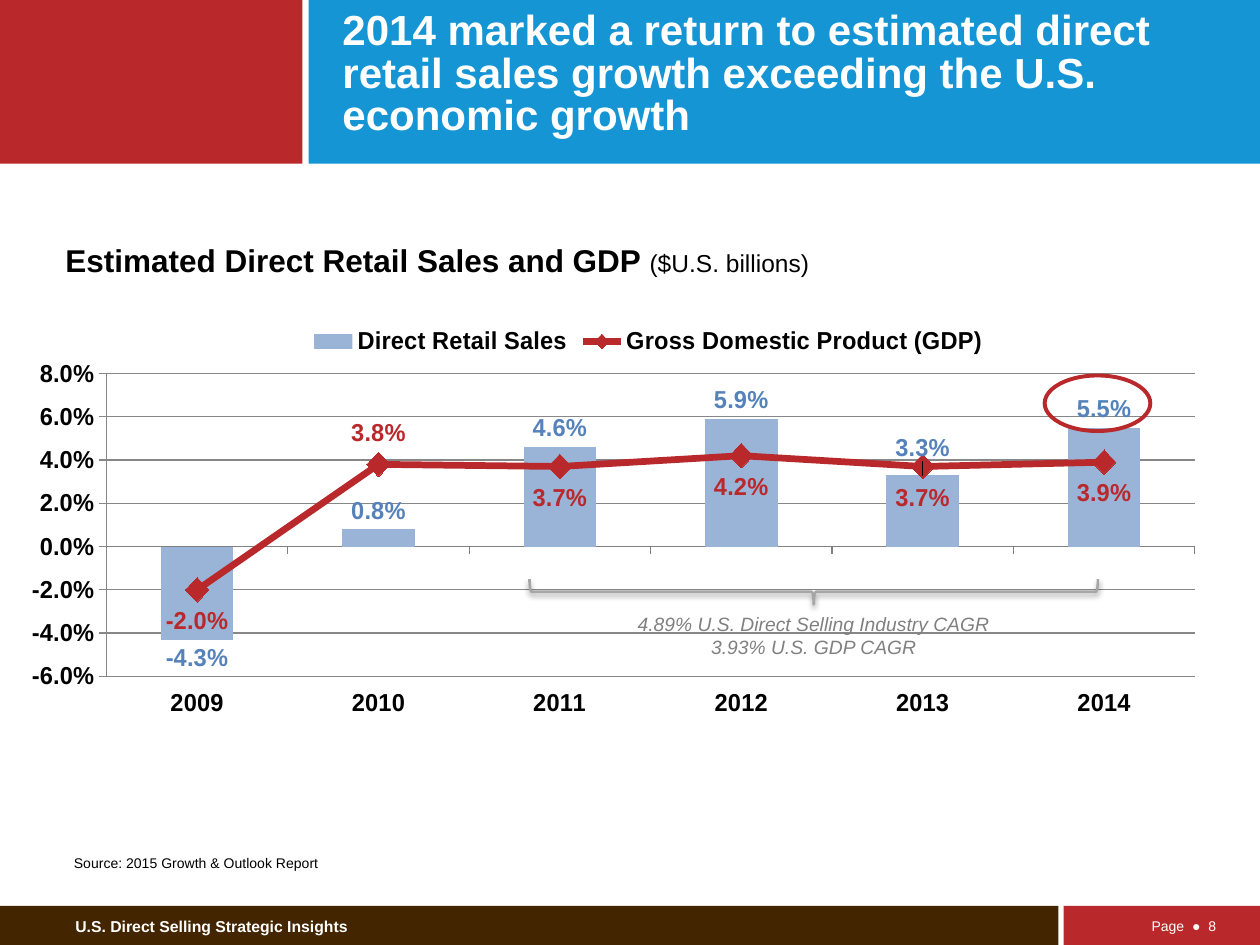
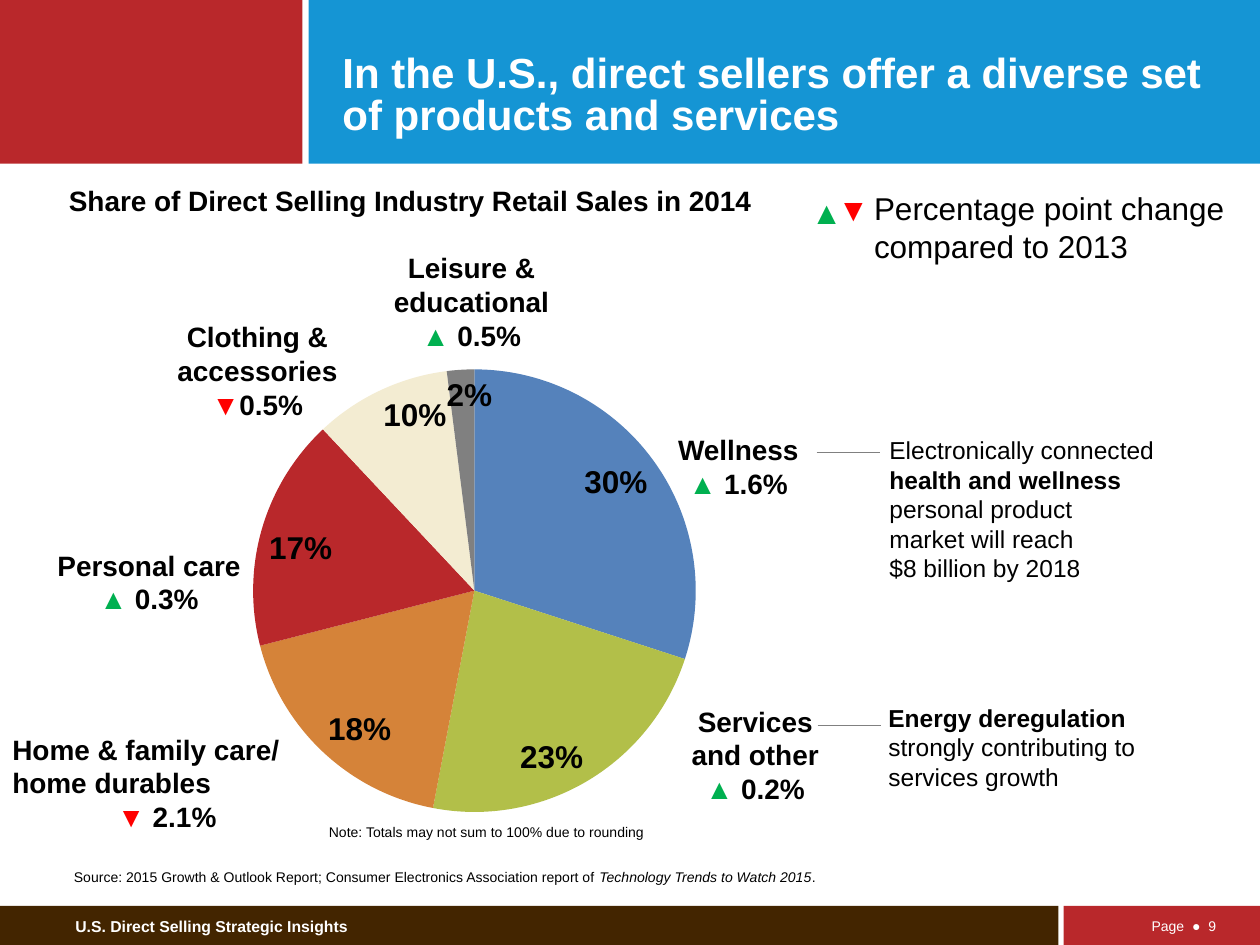
from lxml.etree import SubElement
from pptx import Presentation
from pptx.chart.data import CategoryChartData
from pptx.dml.color import RGBColor
from pptx.enum.chart import (XL_CHART_TYPE, XL_LABEL_POSITION, XL_LEGEND_POSITION,
                             XL_MARKER_STYLE, XL_TICK_LABEL_POSITION, XL_TICK_MARK)
from pptx.enum.shapes import MSO_CONNECTOR, MSO_SHAPE
from pptx.enum.text import MSO_ANCHOR, MSO_AUTO_SIZE, PP_ALIGN
from pptx.oxml import parse_xml
from pptx.oxml.ns import nsdecls, qn
from pptx.util import Cm, Pt

HUES = {"white": "FFFFFF", "black": "000000", "brown": "432500", "blue": "1595D4",
        "red": "B9282B", "steel": "5582BB", "sky": "99B4D6", "olive": "B2BF49",
        "orange": "D58339", "cream": "F3ECD2", "gray": "808080", "silver": "A6A6A6",
        "up": "00B050", "down": "FF0000", "mark": "C00000"}
BASE = {"name": "Arial", "size": Pt(16), "bold": False, "italic": False, "color": "black"}
NOTE = {"size": Pt(8)}
BOLD = {"bold": True}
BODY = {"size": Pt(14)}
LABEL = {"size": Pt(14), "bold": True}
LEFT, MID, RIGHT = PP_ALIGN.LEFT, PP_ALIGN.CENTER, PP_ALIGN.RIGHT
ARROWS = {"up": "▲", "down": "▼"}


class Deck:
    """Holds the house style and the current slide."""

    def __init__(self):
        self.pres = Presentation()
        self.pres.slide_width, self.pres.slide_height = Cm(25.4), Cm(19.05)
        self.layout = self.pres.slide_layouts[5]

    def hue(self, name):
        return RGBColor.from_string(HUES[name])

    def place(self, box):
        return [Cm(size) for size in box]

    def style(self, font, look):
        for key, value in {**BASE, **look}.items():
            if key == "color":
                font.color.rgb = self.hue(value)
            else:
                setattr(font, key, value)

    def paint(self, form, fill=None, line=None, width=0):
        if fill:
            form.fill.solid()
            form.fill.fore_color.rgb = self.hue(fill)
        else:
            form.fill.background()
        if line:
            form.line.color.rgb = self.hue(line)
            form.line.width = Pt(width)
        else:
            form.line.fill.background()

    def open(self, title, page):
        self.slide = self.pres.slides.add_slide(self.layout)
        if len(self.pres.slides) == 1:
            self.brand()
        head = self.slide.shapes.title
        for key, size in zip(("left", "top", "width", "height"),
                             self.place((6.65, 0.48, 18.11, 2.46))):
            setattr(head, key, size)
        frame = head.text_frame
        frame.auto_size, frame.vertical_anchor = MSO_AUTO_SIZE.NONE, MSO_ANCHOR.BOTTOM
        look = {"size": Pt(24), "bold": True, "color": "white"}
        self.fill(frame.paragraphs[0], LEFT, [(title, look)])
        frame.paragraphs[0].line_spacing = 0.85
        self.text((21.34, 18.36, 3.43, 0.61),
                  (RIGHT, [(f"Page  ●  {page}", {**NOTE, "color": "white"})]),
                  anchor=MSO_ANCHOR.MIDDLE)

    def brand(self):
        bands = [("brown", (0, 18.26, 21.34, 0.79)), ("blue", (6.22, 0, 19.18, 3.3)),
                 ("red", (0, 0, 6.1, 3.3)), ("red", (21.44, 18.26, 3.96, 0.79))]
        parts = [self.shape(MSO_SHAPE.RECTANGLE, box, fill=hue) for hue, box in bands]
        look = {"size": Pt(9), "bold": True, "color": "white"}
        parts.append(self.text((1.27, 18.36, 8.38, 0.64),
                               (LEFT, [("U.S. Direct Selling Strategic Insights", look)]),
                               anchor=MSO_ANCHOR.MIDDLE))
        for spot, part in enumerate(parts):
            part.element.nvSpPr.cNvPr.set("id", str(20 + spot))
            self.layout.shapes.element.insert(2 + spot, part.element)

    def fill(self, para, align, runs):
        para.alignment = align
        for words, look in runs:
            for row, piece in enumerate(words.split("\n")):
                if row:
                    para.add_line_break()
                run = para.add_run()
                run.text = piece
                self.style(run.font, look)

    def text(self, box, *paras, anchor=MSO_ANCHOR.TOP, inset=(0.25, 0.13)):
        item = self.slide.shapes.add_textbox(*self.place(box))
        frame = item.text_frame
        frame.word_wrap, frame.vertical_anchor = True, anchor
        frame.margin_left = frame.margin_right = Cm(inset[0])
        frame.margin_top = frame.margin_bottom = Cm(inset[1])
        for row, (align, runs) in enumerate(paras):
            para = frame.add_paragraph() if row else frame.paragraphs[0]
            self.fill(para, align, runs)
        return item

    def shape(self, kind, box, **look):
        item = self.slide.shapes.add_shape(kind, *self.place(box))
        item.shadow.inherit = False
        self.paint(item, **look)
        return item

    def brace(self, box):
        item = self.shape(MSO_SHAPE.RIGHT_BRACE, box, line="silver", width=1.5)
        item.rotation = 270
        item.element.spPr.find(qn("a:xfrm")).set("flipH", "1")
        item.element.spPr.find(qn("a:effectLst")).append(parse_xml(
            f'<a:outerShdw {nsdecls("a")} blurRad="{Pt(3.1)}" dist="{Pt(1.6)}" dir="5400000" '
            f'rotWithShape="0"><a:srgbClr val="{HUES["black"]}"><a:alpha val="38000"/>'
            '</a:srgbClr></a:outerShdw>'))

    def rule(self, left, top, width):
        ends = self.place((left, top, left + width, top))
        item = self.slide.shapes.add_connector(MSO_CONNECTOR.STRAIGHT, *ends)
        item.line.color.rgb, item.line.width = self.hue("gray"), Pt(0.75)
        SubElement(item.element.spPr, qn("a:effectLst"))

    def tag(self, box, name, trend, change, align=MID):
        self.text(box, (align, [(name, BOLD)]),
                  (MID, [(ARROWS[trend], {**BOLD, "color": trend}), (change, BOLD)]))

    def chart(self, kind, box, cats, series, form, look, plot):
        data = CategoryChartData(number_format=form)
        data.categories = cats
        for name, values in series.items():
            data.add_series(name, values)
        chart = self.slide.shapes.add_chart(kind, *self.place(box), data).chart
        chart.has_title = chart.has_legend = False
        self.style(chart.font, look)
        area = chart.element.chart.plotArea
        for old in area.findall(qn("c:layout")):
            area.remove(old)
        self.shift(area, 0, '<c:layoutTarget val="inner"/><c:xMode val="edge"/>'
                   '<c:yMode val="edge"/>', **dict(zip("xywh", plot)))
        return chart

    def shift(self, node, spot, lead="", **marks):
        tags = "".join(f'<c:{key} val="{value}"/>' for key, value in marks.items())
        node.insert(spot, parse_xml(f'<c:layout {nsdecls("c")}><c:manualLayout>{lead}{tags}'
                                    '</c:manualLayout></c:layout>'))

    def labels(self, series, place, form, look):
        marks = series.data_labels
        marks.show_value, marks.position = True, place
        marks.number_format, marks.number_format_is_linked = form, False
        self.style(marks.font, look)

    def single(self, series, spot, place, look):
        mark = series.points[spot].data_label
        mark.position = place
        self.style(mark.font, look)

    def nudge(self, chart, spot, **marks):
        for node in chart.element.xpath(f".//c:dLbl[c:idx/@val={spot}]"):
            self.shift(node, 1, **marks)

    def overlay(self, chart, low, high, step):
        area = chart.element.chart.plotArea
        bars = area.find(qn("c:barChart"))
        ser = bars.findall(qn("c:ser"))[-1]
        for flag in ser.findall(qn("c:invertIfNegative")):
            ser.remove(flag)
        line = parse_xml(f'<c:lineChart {nsdecls("c")}><c:grouping val="standard"/>'
                         '<c:varyColors val="0"/><c:marker val="1"/><c:axId val="501"/>'
                         '<c:axId val="502"/></c:lineChart>')
        line.insert(2, ser)
        bars.addnext(line)
        spot = area.find(qn("c:valAx"))
        axes = [("catAx", 501, 502, "", "b", "autoZero", ""),
                ("valAx", 502, 501, f'<c:max val="{high}"/><c:min val="{low}"/>', "r", "max",
                 f'<c:majorUnit val="{step}"/>')]
        for kind, own, other, scale, side, cross, unit in axes:
            axis = parse_xml(
                f'<c:{kind} {nsdecls("c")}><c:axId val="{own}"/><c:scaling>'
                f'<c:orientation val="minMax"/>{scale}</c:scaling><c:delete val="1"/>'
                f'<c:axPos val="{side}"/><c:crossAx val="{other}"/>'
                f'<c:crosses val="{cross}"/>{unit}</c:{kind}>')
            spot.addnext(axis)
            spot = axis
        return chart.plots[1].series[0]


def growth(deck):
    deck.open("2014 marked a return to estimated direct retail sales growth exceeding "
              "the U.S. economic growth", 8)
    deck.text((1.07, 4.72, 23.95, 1.02),
              (LEFT, [("Estimated Direct Retail Sales and GDP ", {"size": Pt(18), "bold": True}),
                      ("($U.S. billions)", BODY)]))
    series = {"Direct Retail Sales": (-0.043, 0.008, 0.046, 0.059, 0.033, 0.055),
              "Gross Domestic Product (GDP)": (-0.02, 0.038, 0.037, 0.042, 0.037, 0.039)}
    years = [str(year) for year in range(2009, 2015)]
    chart = deck.chart(XL_CHART_TYPE.COLUMN_CLUSTERED, (0.64, 6.32, 23.98, 8.46), years,
                       series, "0.0%", LABEL, (0.027, 0.143, 0.95, 0.722))
    gdp = deck.overlay(chart, -0.07, 0.07, 0.02)
    chart.has_legend = True
    chart.legend.position = XL_LEGEND_POSITION.TOP
    chart.legend.include_in_layout = False
    deck.style(chart.legend.font, LABEL)
    value = chart.value_axis
    for key, item in {"minimum_scale": -0.06, "maximum_scale": 0.08, "major_unit": 0.02,
                      "has_major_gridlines": False, "visible": False}.items():
        setattr(value, key, item)
    axis = chart.category_axis
    axis.tick_label_position = XL_TICK_LABEL_POSITION.LOW
    axis.major_tick_mark = XL_TICK_MARK.OUTSIDE
    axis.format.line.color.rgb = deck.hue("gray")
    bars = chart.plots[0]
    bars.gap_width, bars.vary_by_categories = 150, False
    sales = bars.series[0]
    deck.paint(sales.format, fill="sky")
    blue, red = {**LABEL, "color": "steel"}, {**LABEL, "color": "red"}
    deck.labels(sales, XL_LABEL_POSITION.OUTSIDE_END, "0.0%", blue)
    deck.single(sales, 4, XL_LABEL_POSITION.OUTSIDE_END, blue)
    deck.nudge(chart, 4, x=0, y=-0.02)
    gdp.smooth = False
    gdp.format.line.color.rgb, gdp.format.line.width = deck.hue("red"), Pt(4)
    gdp.marker.style, gdp.marker.size = XL_MARKER_STYLE.DIAMOND, 14
    deck.paint(gdp.marker.format, fill="mark")
    deck.labels(gdp, XL_LABEL_POSITION.BELOW, "0.0%", red)
    deck.single(gdp, 1, XL_LABEL_POSITION.ABOVE, red)
    deck.shape(MSO_SHAPE.OVAL, (21.06, 7.57, 2.13, 1.12), line="red", width=2.25)
    deck.text((1.24, 17.09, 15.09, 0.61),
              (LEFT, [("Source: 2015 Growth & Outlook Report", NOTE)]))
    deck.brace((16.15, 6.2, 0.51, 11.46))
    look = {"size": Pt(11), "italic": True, "color": "gray"}
    deck.text((12.34, 12.22, 8.13, 1.68),
              (MID, [("4.89% U.S. Direct Selling Industry CAGR\n3.93% U.S. GDP CAGR", look)]))


def share(deck):
    deck.open("In the U.S., direct sellers offer a diverse set of products and services", 9)
    chart = deck.chart(XL_CHART_TYPE.PIE, (0.74, 6.71, 16.94, 9.7), list("123456"),
                       {"Series 1": (30, 23, 18, 17, 10, 2)}, '#,##0"%"',
                       {"size": Pt(18)}, (0.257, 0.076, 0.528, 0.92))
    pie = chart.plots[0].series[0]
    for spot, hue in enumerate(("steel", "olive", "orange", "red", "cream", "gray")):
        deck.paint(pie.points[spot].format, fill=hue)
    look = {"size": Pt(18), "bold": True}
    deck.labels(pie, XL_LABEL_POSITION.INSIDE_END, '#,##0"%"', look)
    deck.single(pie, 5, XL_LABEL_POSITION.INSIDE_END, look)
    deck.nudge(chart, 5, x=0.01, y=0)
    deck.tag((0, 14.63, 6.73, 2.31), "Home & family care/\nhome durables", "down", " 2.1%", LEFT)
    deck.tag((12.8, 8.59, 4.17, 1.63), "Wellness", "up", " 1.6%")
    deck.tag((0.86, 10.92, 4.29, 1.63), "Personal care", "up", " 0.3%")
    deck.tag((12.95, 14.07, 4.55, 3), "Services\nand other", "up", " 0.2%")
    deck.tag((2.79, 6.32, 4.8, 2.31), "Clothing & accessories", "down", "0.5%")
    deck.tag((7.42, 4.93, 4.17, 2.31), "Leisure & educational", "up", " 0.5%")
    strong = {**BODY, **BOLD}
    deck.text((17.42, 8.53, 7.32, 3.18),
              (LEFT, [("Electronically connected ", BODY), ("health and wellness ", strong),
                      ("personal product\nmarket will reach\n$8 billion by 2018", BODY)]),
              inset=(0.51, 0.25))
    deck.text((17.4, 13.92, 7.32, 2.95),
              (LEFT, [("Energy deregulation ", strong),
                      ("strongly contributing to services growth", BODY)]),
              inset=(0.51, 0.25))
    for left, top in ((16.46, 9.12), (16.48, 14.63)):
        deck.rule(left, top, 1.27)
    deck.text((1.24, 17.37, 16.46, 0.61),
              (LEFT, [("Source: 2015 Growth & Outlook Report; Consumer Electronics "
                       "Association report of", NOTE),
                      (" Technology Trends to Watch 2015", {**NOTE, "italic": True}),
                      (".", NOTE)]))
    deck.text((1.14, 3.58, 15.21, 0.94),
              (LEFT, [("Share of Direct Selling Industry Retail Sales in 2014", BOLD)]))
    deck.text((17.37, 3.68, 8.03, 1.8),
              (LEFT, [("Percentage point change compared to 2013", {"size": Pt(18)})]))
    for trend, left, top in (("up", 16.1, 3.76), ("down", 16.64, 3.71)):
        deck.text((left, top, 1.02, 1.02),
                  (MID, [(ARROWS[trend], {"size": Pt(18), "color": trend})]))
    deck.text((6.38, 16.48, 10.67, 0.61),
              (LEFT, [("Note: Totals may not sum to 100% due to rounding", NOTE)]))


def main():
    deck = Deck()
    growth(deck)
    share(deck)
    deck.pres.save("out.pptx")


if __name__ == "__main__":
    main()
